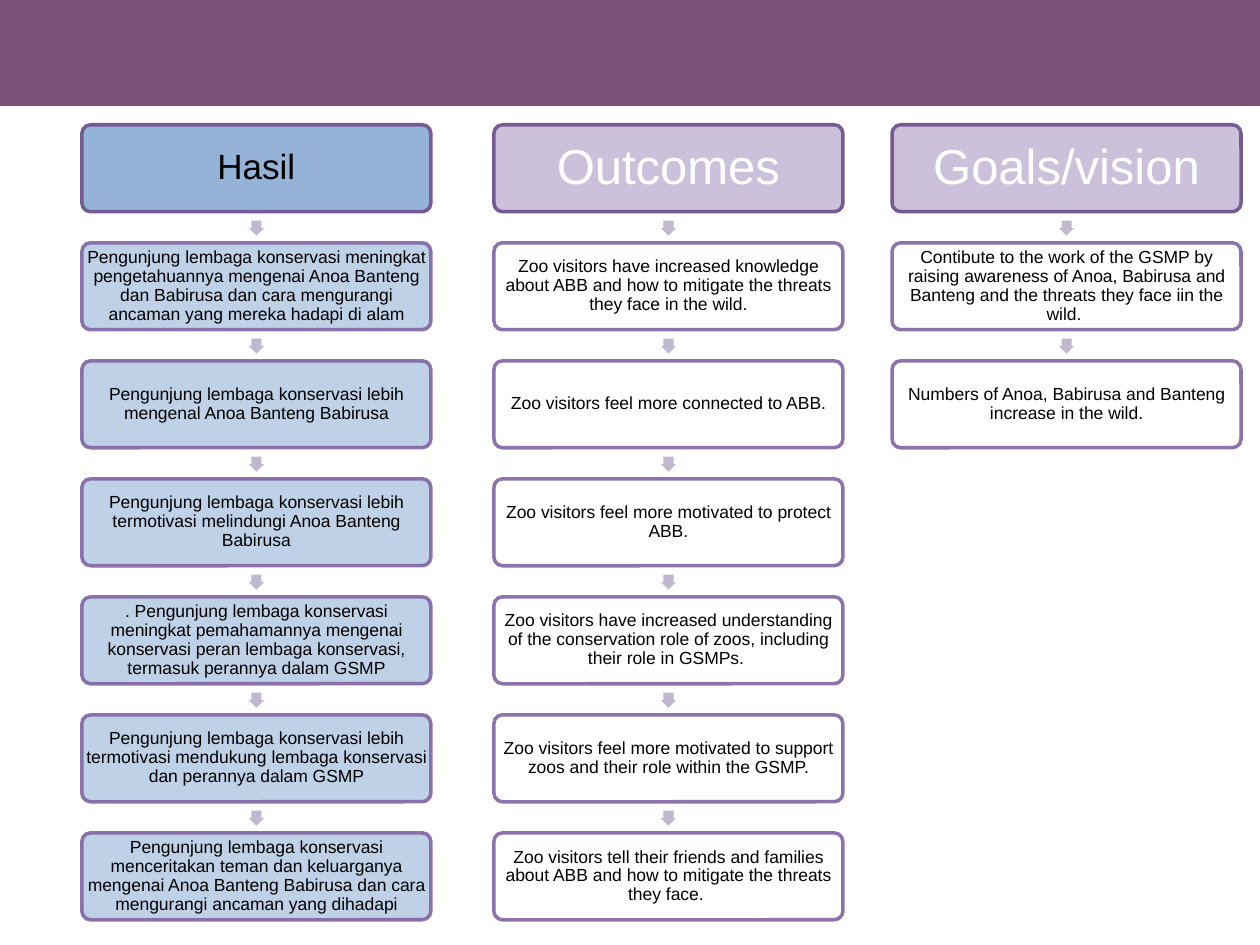
"""Build a slide with three flow columns: Hasil, Outcomes and Goals/vision."""
from lxml import etree
from pptx import Presentation
from pptx.dml.color import RGBColor
from pptx.enum import shapes, text
from pptx.oxml import ns
from pptx.util import Inches, Pt

BAND = RGBColor(0x7D, 0x51, 0x79)
LILAC = RGBColor(0xCC, 0xC1, 0xDA)
BLUE = RGBColor(0x95, 0xB3, 0xD7)
PALE_BLUE = RGBColor(0xB9, 0xCD, 0xE5)
HEAD_LINE = RGBColor(0x74, 0x5B, 0x93)
STEP_LINE = RGBColor(0x80, 0x64, 0xA2)
ARROW = RGBColor(0xC0, 0xB8, 0xCE)
WHITE = RGBColor(0xFF, 0xFF, 0xFF)
BLACK = RGBColor(0x00, 0x00, 0x00)

TOP, LAST_TOP, WIDTH, HEIGHT = 0.99, 6.61, 2.77, 0.69
PITCH = (LAST_TOP - TOP) / 6
ARROW_SIZE, ARROW_DROP = 0.12, 0.76

COLUMNS = [
    {"left": 3.92, "title": "Outcomes", "size": 28, "inset": 0.04,
     "color": WHITE, "head_fill": LILAC, "step_fill": WHITE,
     "steps": [
         "Zoo visitors have increased knowledge about ABB and how to mitigate the threats they face in the wild.",
         "Zoo visitors feel more connected to ABB.",
         "Zoo visitors feel more motivated to protect ABB.",
         "Zoo visitors have increased understanding of the conservation role of zoos, including their role in GSMPs. ",
         "Zoo visitors feel more motivated to support zoos and their role within the GSMP.",
         "Zoo visitors tell their friends and families about ABB and how to mitigate the threats they face. ",
     ]},
    {"left": 7.08, "title": "Goals/vision", "size": 28, "inset": 0.04,
     "color": WHITE, "head_fill": LILAC, "step_fill": WHITE,
     "steps": [
         "Contibute to the work of the GSMP by raising awareness of Anoa, Babirusa and Banteng and the threats they face iin the wild. ",
         "Numbers of Anoa, Babirusa and Banteng increase in the wild.",
     ]},
    {"left": 0.65, "title": "Hasil", "size": 20, "inset": 0.03,
     "color": BLACK, "head_fill": BLUE, "step_fill": PALE_BLUE,
     "steps": [
         "Pengunjung lembaga konservasi meningkat pengetahuannya mengenai Anoa Banteng dan Babirusa dan cara mengurangi ancaman yang mereka hadapi di alam",
         "Pengunjung lembaga konservasi lebih mengenal Anoa Banteng Babirusa",
         "Pengunjung lembaga konservasi lebih termotivasi melindungi Anoa Banteng Babirusa",
         ". Pengunjung lembaga konservasi meningkat pemahamannya mengenai konservasi peran lembaga konservasi, termasuk perannya dalam GSMP",
         "Pengunjung lembaga konservasi lebih termotivasi mendukung lembaga konservasi dan perannya dalam GSMP",
         "Pengunjung lembaga konservasi menceritakan teman dan keluarganya mengenai Anoa Banteng Babirusa dan cara mengurangi ancaman yang dihadapi",
     ]},
]


def add_filled(parent, kind, left, top, width, height, color):
    sp = parent.add_shape(kind, Inches(left), Inches(top), Inches(width), Inches(height))
    sp.shadow.inherit = False
    sp.fill.solid()
    sp.fill.fore_color.rgb = color
    sp.line.fill.background()
    return sp


def add_box(parent, left, top, fill, line, words, size, color, inset):
    sp = add_filled(parent, shapes.MSO_SHAPE.ROUNDED_RECTANGLE, left, top, WIDTH, HEIGHT, fill)
    sp.adjustments[0] = 0.1
    sp.line.color.rgb = line
    sp.line.width = Pt(2)
    tf = sp.text_frame
    margins = dict.fromkeys(("margin_left", "margin_top", "margin_right", "margin_bottom"), Inches(inset))
    for name, value in {**margins, "word_wrap": True, "vertical_anchor": text.MSO_ANCHOR.MIDDLE}.items():
        setattr(tf, name, value)
    p = tf.paragraphs[0]
    p.alignment = text.PP_ALIGN.CENTER
    p.line_spacing = 0.9
    r = p.add_run()
    r.text = words
    for name, value in {"name": "Arial", "size": Pt(size)}.items():
        setattr(r.font, name, value)
    r.font.color.rgb = color
    return sp


prs = Presentation()
prs.slide_width, prs.slide_height = Inches(10), Inches(7.5)
s = prs.slides.add_slide(prs.slide_layouts[6])
add_filled(s.shapes, shapes.MSO_SHAPE.RECTANGLE, 0, 0, 10, 0.84, BAND)

groups = [s.shapes.add_group_shape().shapes for _ in range(2)]
for col, group in zip(COLUMNS, (groups[0], groups[0], groups[1])):
    left = col["left"]
    add_box(group, left, TOP, col["head_fill"], HEAD_LINE,
            col["title"], col["size"], col["color"], col["inset"])
    for i, words in enumerate(col["steps"]):
        arrow = add_filled(group, shapes.MSO_SHAPE.RIGHT_ARROW, left + (WIDTH - ARROW_SIZE) / 2,
                           TOP + ARROW_DROP + i * PITCH, ARROW_SIZE, ARROW_SIZE, ARROW)
        arrow.rotation = 90
        arrow.adjustments[0], arrow.adjustments[1] = 0.667, 0.5
        box = add_box(group, left, TOP + (i + 1) * PITCH, col["step_fill"], STEP_LINE,
                      words, 10, BLACK, 0.01)
        for color in box.fill._xPr.iter(ns.qn("a:srgbClr")):
            etree.SubElement(color, ns.qn("a:alpha"), val="90000")

prs.save("out.pptx")
